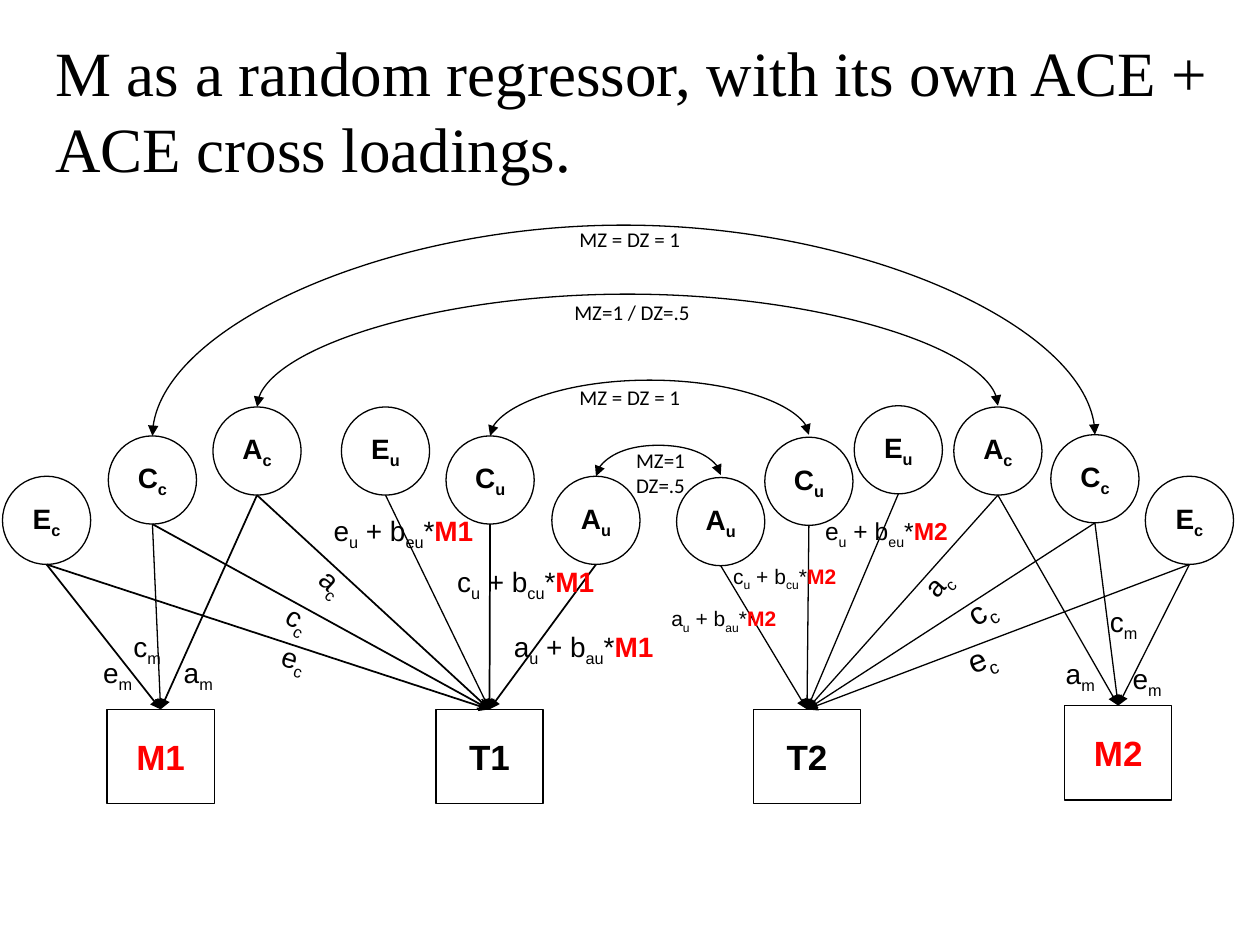
from lxml.etree import SubElement
from pptx import Presentation
from pptx.dml.color import RGBColor
from pptx.enum.shapes import MSO_CONNECTOR, MSO_SHAPE
from pptx.enum.text import MSO_ANCHOR, MSO_AUTO_SIZE, PP_ALIGN
from pptx.oxml.ns import qn
from pptx.util import Inches, Pt

COLOURS = {"ink": "000000", "paper": "FFFFFF", "moderator": "FF0000"}
COLUMNS, ROWS = 100, 75
LATENT = 7
BOX_WIDTH, BOX_HEIGHT = 8.5, 7.5

LATENTS = {
    "Ec1": ("E|c", 0.2, 37.8), "Cc1": ("C|c", 8.6, 34.6), "Ac1": ("A|c", 16.9, 32.3),
    "Eu1": ("E|u", 27.1, 32.3), "Cu1": ("C|u", 35.4, 34.6), "Au1": ("A|u", 43.8, 37.8),
    "Au2": ("A|u", 53.7, 37.9), "Cu2": ("C|u", 60.7, 34.7), "Eu2": ("E|u", 67.8, 32.2),
    "Ac2": ("A|c", 75.7, 32.3), "Cc2": ("C|c", 83.4, 34.5), "Ec2": ("E|c", 90.9, 37.8),
}
OBSERVED = {
    "M1": (8.5, 56.3, "moderator"), "T1": (34.6, 56.3, "ink"),
    "T2": (59.8, 56.3, "ink"), "M2": (84.5, 56, "moderator"),
}
LOADINGS = {
    "M1": ["Ec1", "Cc1", "Ac1"],
    "T1": ["Ec1", "Cc1", "Ac1", "Eu1", "Cu1", "Au1"],
    "T2": ["Au2", "Cu2", "Eu2", "Ac2", "Cc2", "Ec2"],
    "M2": ["Ac2", "Cc2", "Ec2"],
}
THIN_LOADINGS = [("Eu1", "T1"), ("Cc1", "M1")]
OPEN_HEADED = ("Cc1", "T1")
CORRELATIONS = [("Au1", "Au2", 35.3), ("Cu1", "Cu2", 30.1), ("Cc1", "Cc2", 17.6), ("Ac1", "Ac2", 23.2)]
MODERATED = [
    ("e|u| + b|eu|*", "M1", 25.5, 40.3, 13.6, 3.7, 16),
    ("c|u| + b|cu|*", "M1", 35.3, 44.3, 13.4, 3.7, 16),
    ("a|u| + b|au|*", "M1", 39.8, 49.5, 13.6, 3.7, 16),
    ("e|u| + b|eu|*", "M2", 64.5, 40.5, 12.2, 3.4, 14),
    ("c|u| + b|cu|*", "M2", 57.2, 44.2, 10.5, 3, 12),
    ("a|u| + b|au|*", "M2", 52.3, 47.6, 10.7, 3, 12),
]
PATH_LABELS = [
    ("e|m", 7.2, 51.5, 4.5, 3.7, 16, 0), ("c|m", 9.6, 49.5, 4.4, 3.7, 16, 0),
    ("a|m", 13.6, 51.5, 4.5, 3.7, 16, 0), ("a|c", 24.4, 44.6, 4.6, 3.7, 16, 42.4),
    ("c|c", 21.8, 47.3, 3.9, 3.7, 16, 30.6), ("e|c", 21.4, 50.5, 4.6, 3.7, 16, 17.1),
    ("a|c", 72.4, 44.4, 4, 3.7, 16, 312.1), ("c|c", 75.8, 46.4, 4.1, 4, 18, 328.4),
    ("e|c", 75.8, 50.2, 4.3, 4, 18, 339.2), ("a|m", 83.6, 51.6, 4.5, 3.7, 16, 0),
    ("c|m", 87.1, 47.5, 4.4, 3.7, 16, 0), ("e|m", 88.9, 52, 4.5, 3.7, 16, 0),
]
TWIN_LABELS = [
    ("MZ = DZ = 1", 45, 17.5, 10.1, 3), ("MZ=1 / DZ=.5", 44.6, 23.3, 11.2, 3),
    ("MZ = DZ = 1", 45, 30, 10.1, 3), ("MZ=1\nDZ=.5", 49.5, 35, 6.3, 5),
]


class PathDiagram:
    """Draws path-model elements on a grid of COLUMNS by ROWS."""

    def __init__(self):
        self.deck = Presentation()
        self.deck.slide_width, self.deck.slide_height = Inches(10), Inches(7.5)
        self.slide = self.deck.slides.add_slide(self.deck.slide_layouts[6])
        self.shapes = self.slide.shapes

    def place(self, column, row):
        return (round(self.deck.slide_width * column / COLUMNS),
                round(self.deck.slide_height * row / ROWS))

    def colour(self, name):
        return RGBColor.from_string(COLOURS[name])

    def style(self, run, size, colour="ink", bold=False, font="Arial"):
        run.font.size, run.font.bold, run.font.name = Pt(size), bold, font
        run.font.color.rgb = self.colour(colour)

    def wording(self, frame, text, size, colour="ink", bold=False, font="Arial", ending=""):
        frame.word_wrap = False
        for number, line in enumerate(text.split("\n")):
            paragraph = frame.add_paragraph() if number else frame.paragraphs[0]
            for position, part in enumerate(line.split("|")):
                run = paragraph.add_run()
                run.text = part
                self.style(run, size, colour, bold, font)
                if position % 2:
                    run.font._element.set("baseline", "-25000")
        if ending:
            run = paragraph.add_run()
            run.text = ending
            self.style(run, size, "moderator", True, font)

    def variable(self, kind, text, column, row, width, height, size, colour="ink"):
        node = self.shapes.add_shape(kind, *self.place(column, row), *self.place(width, height))
        node.shadow.inherit = False
        node.fill.solid()
        node.fill.fore_color.rgb = self.colour("paper")
        node.line.color.rgb = self.colour("ink")
        node.line.width = Pt(0.75)
        node.text_frame.vertical_anchor = MSO_ANCHOR.MIDDLE
        self.wording(node.text_frame, text, size, colour, True)
        node.text_frame.paragraphs[0].alignment = PP_ALIGN.CENTER
        return node

    def label(self, text, column, row, width, height, size, angle=0, font="Arial", ending=""):
        box = self.shapes.add_textbox(*self.place(column, row), *self.place(width, height))
        box.rotation = angle
        self.wording(box.text_frame, text, size, font=font, ending=ending)
        box.text_frame.auto_size = MSO_AUTO_SIZE.SHAPE_TO_FIT_TEXT

    def connector(self, kind, start, end, weight, **heads):
        link = self.shapes.add_connector(kind, *self.place(*start), *self.place(*end))
        link.line.color.rgb = self.colour("ink")
        link.line.width = Pt(weight)
        outline = link.line._get_or_add_ln()
        for tag, head in heads.items():
            SubElement(outline, qn(f"a:{tag}"), type=head)
        SubElement(link._element.spPr, qn("a:effectLst"))
        return link

    def loading(self, start, target, weight, head):
        link = self.connector(MSO_CONNECTOR.STRAIGHT, start, start, weight, tailEnd=head)
        link.end_connect(target, 0)

    def correlation(self, start, end, peak):
        depth, span = 0.1, end[0] - start[0]
        middle, level = (start[0] + end[0]) / 2, start[1] - depth / 2
        arc = self.connector(MSO_CONNECTOR.CURVE, (middle - depth / 2, level - span / 2),
                             (middle + depth / 2, level + span / 2), 0.75,
                             headEnd="triangle", tailEnd="triangle")
        properties = arc._element.spPr
        properties.find(qn("a:xfrm")).set("rot", str(270 * 60000))
        guides = properties.find(qn("a:prstGeom")).find(qn("a:avLst"))
        bulge = round((start[1] - peak) / depth * 100000)
        SubElement(guides, qn("a:gd"), name="adj1", fmla=f"val {bulge}")


def main():
    diagram = PathDiagram()
    tops, bottoms, observed = {}, {}, {}
    for name, (text, column, row) in LATENTS.items():
        diagram.variable(MSO_SHAPE.OVAL, text, column, row, LATENT, LATENT, 16)
        tops[name] = (column + LATENT / 2, row)
        bottoms[name] = (column + LATENT / 2, row + LATENT)
    for name, (column, row, colour) in OBSERVED.items():
        observed[name] = diagram.variable(MSO_SHAPE.RECTANGLE, name, column, row,
                                          BOX_WIDTH, BOX_HEIGHT, 20, colour)
    for target, sources in LOADINGS.items():
        for source in sources:
            thin = target.endswith("2") or (source, target) in THIN_LOADINGS
            head = "arrow" if (source, target) == OPEN_HEADED else "triangle"
            diagram.loading(bottoms[source], observed[target], 0.75 if thin else 1, head)
    for first, second, peak in CORRELATIONS:
        diagram.correlation(tops[first], tops[second], peak)
    for text, moderator, *box, size in MODERATED:
        diagram.label(text, *box, size, ending=moderator)
    for text, *box, size, angle in PATH_LABELS:
        diagram.label(text, *box, size, angle)
    for text, *box in TWIN_LABELS:
        diagram.label(text, *box, 12, font="Calibri")
    diagram.label("M as a random regressor, with its own ACE +\nACE cross loadings.",
                  3.4, 2.2, 95.7, 13.1, 36, font="Times New Roman")
    diagram.deck.save("out.pptx")


if __name__ == "__main__":
    main()
